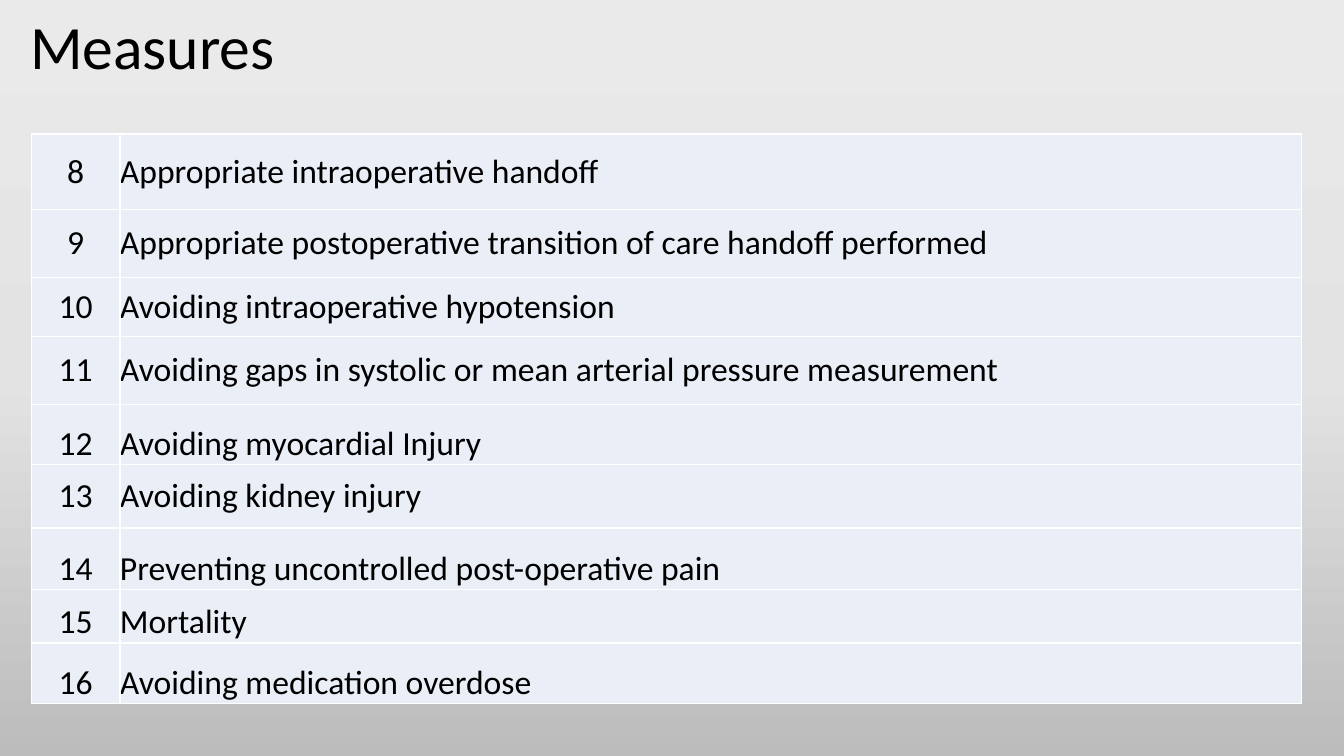
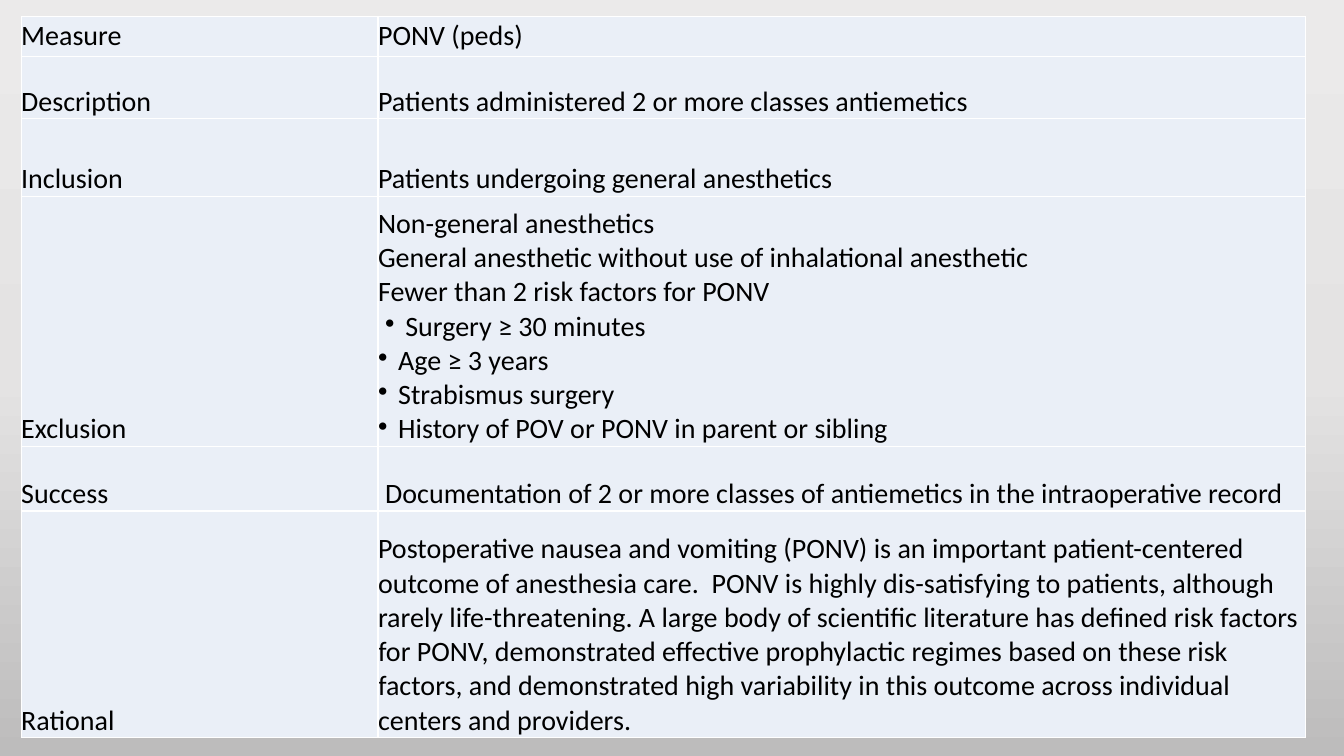
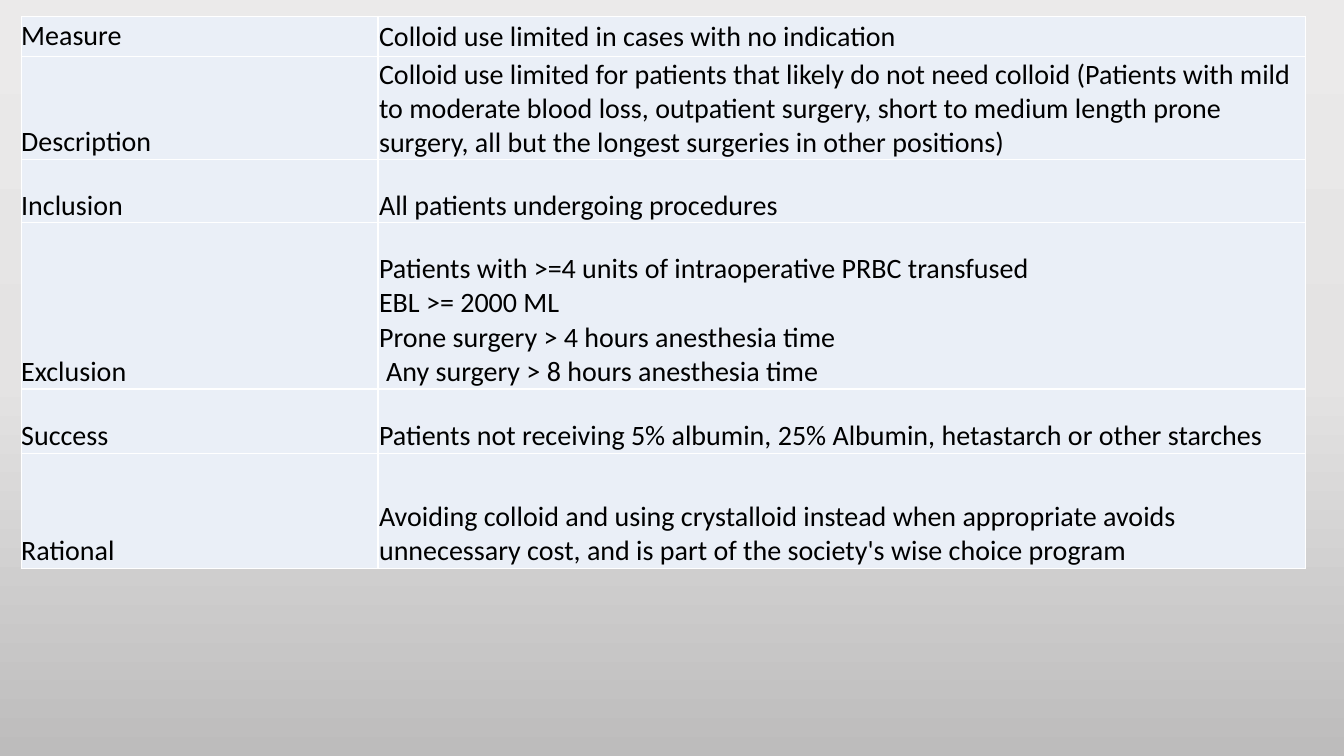
from copy import deepcopy

from pptx import Presentation
from pptx.dml.color import RGBColor
from pptx.enum.text import MSO_ANCHOR as ANCHOR, PP_ALIGN as ALIGN
from pptx.oxml import parse_xml
from pptx.oxml.ns import nsdecls, qn
from pptx.util import Inches, Pt

THEME = {
    "font": "Calibri",
    "text": "000000",
    "cell": "EAEFF7",
    "border": "FFFFFF",
    "background": [(0, "EBEAEA"), (0.5, "E4E3E3"), (1, "BDBCBC")],
    "title_size": 44,
    "list_size": 24,
    "detail_size": 20,
}
BULLET = "• "
BULLET_INDENT = 0.2
LEAD_INDENT = 0.07

LABELS = ["Measure", "Description", "Inclusion", "Exclusion", "Success", "Rational"]
DETAIL_ANCHORS = "mbbbbb"

MEASURES = [
    ("8", "Appropriate intraoperative handoff"),
    ("9", "Appropriate postoperative transition of care handoff performed"),
    ("10", "Avoiding intraoperative hypotension"),
    ("11", "Avoiding gaps in systolic or mean arterial pressure measurement"),
    ("12", "Avoiding myocardial Injury"),
    ("13", "Avoiding kidney injury"),
    ("14", "Preventing uncontrolled post-operative pain"),
    ("15", "Mortality"),
    ("16", "Avoiding medication overdose"),
]

PONV = [
    "PONV (peds)",
    "Patients administered 2 or more classes antiemetics",
    "Patients undergoing general anesthetics",
    "Non-general anesthetics\n"
    "General anesthetic without use of inhalational anesthetic\n"
    "Fewer than 2 risk factors for PONV\n"
    " • Surgery ≥ 30 minutes\n"
    "• Age ≥ 3 years\n"
    "• Strabismus surgery\n"
    "• History of POV or PONV in parent or sibling",
    " Documentation of 2 or more classes of antiemetics in the intraoperative record",
    "Postoperative nausea and vomiting (PONV) is an important patient-centered "
    "outcome of anesthesia care.  PONV is highly dis-satisfying to patients, although "
    "rarely life-threatening. A large body of scientific literature has defined risk "
    "factors for PONV, demonstrated effective prophylactic regimes based on these risk "
    "factors, and demonstrated high variability in this outcome across individual "
    "centers and providers.",
]

COLLOID = [
    "Colloid use limited in cases with no indication",
    "Colloid use limited for patients that likely do not need colloid (Patients with "
    "mild to moderate blood loss, outpatient surgery, short to medium length prone "
    "surgery, all but the longest surgeries in other positions)",
    "All patients undergoing procedures",
    "Patients with >=4 units of intraoperative PRBC transfused\n"
    "EBL >= 2000 ML\n"
    "Prone surgery > 4 hours anesthesia time\n"
    " Any surgery > 8 hours anesthesia time",
    "Patients not receiving 5% albumin, 25% Albumin, hetastarch or other starches",
    "Avoiding colloid and using crystalloid instead when appropriate avoids "
    "unnecessary cost, and is part of the society's wise choice program",
]

DETAIL = {"left": 0.21, "top": 0.16, "cols": [3.54, 9.2],
          "size": THEME["detail_size"], "anchors": DETAIL_ANCHORS}

SLIDES = [
    {"title": "Measures", "left": 0.31, "top": 1.33, "cols": [0.88, 11.72],
     "heights": [0.75, 0.67, 0.59, 0.67, 0.6, 0.63, 0.61, 0.53, 0.6],
     "size": THEME["list_size"], "anchors": "mmmmbmbbb",
     "first_align": ALIGN.CENTER, "rows": MEASURES},
    {**DETAIL, "heights": [0.4, 0.62, 0.77, 2.48, 0.64, 2.25],
     "rows": list(zip(LABELS, PONV))},
    {**DETAIL, "heights": [0.4, 1.02, 0.63, 1.65, 0.64, 1.14],
     "rows": list(zip(LABELS, COLLOID)), "pad": 0.01},
]


def set_background(master):
    fill = master.background.fill
    fill.gradient()
    fill.gradient_angle = 270
    stops = master.element.find(".//" + qn("a:gsLst"))
    stops.insert(1, deepcopy(stops[0]))
    for stop, (position, color) in zip(fill.gradient_stops, THEME["background"]):
        stop.position = position
        stop.color.rgb = RGBColor.from_string(color)


def style_font(font, size):
    for name, value in {"name": THEME["font"], "size": Pt(size), "bold": False}.items():
        setattr(font, name, value)
    font.color.rgb = RGBColor.from_string(THEME["text"])


def write_line(p, line, size, align):
    lead = LEAD_INDENT if line.startswith(" ") else 0
    line = line.lstrip()
    pPr = p._p.get_or_add_pPr()
    if line.startswith(BULLET):
        line = line.removeprefix(BULLET)
        lead += BULLET_INDENT
        pPr.set("indent", str(-Inches(BULLET_INDENT)))
        pPr.append(parse_xml(f'<a:buChar {nsdecls("a")} char="•"/>'))
    if lead:
        pPr.set("marL", str(Inches(lead)))
    p.alignment = align
    r = p.add_run()
    r.text = line
    style_font(r.font, size)


def format_cell(cell, anchor, pad):
    margins = {"margin_left": pad, "margin_top": pad, "margin_right": pad, "margin_bottom": 0}
    for name, value in margins.items():
        setattr(cell, name, Inches(value))
    cell.vertical_anchor = ANCHOR.MIDDLE if anchor == "m" else ANCHOR.BOTTOM
    tcPr = cell._tc.get_or_add_tcPr()
    for side in "LRTB":
        tcPr.append(parse_xml(
            f'<a:ln{side} {nsdecls("a")} w="{Pt(1)}"><a:solidFill>'
            f'<a:srgbClr val="{THEME["border"]}"/></a:solidFill></a:ln{side}>'))
    cell.fill.solid()
    cell.fill.fore_color.rgb = RGBColor.from_string(THEME["cell"])


def add_title(s, text):
    sp = s.shapes.add_textbox(Inches(0.2), Inches(0.11), Inches(11.5), Inches(0.77))
    tf = sp.text_frame
    tf.word_wrap = True
    tf.vertical_anchor = ANCHOR.MIDDLE
    p = tf.paragraphs[0]
    p.line_spacing = 0.9
    write_line(p, text, THEME["title_size"], ALIGN.LEFT)


def add_measure_table(s, data):
    cols, heights = data["cols"], data["heights"]
    table = s.shapes.add_table(
        len(heights), len(cols), Inches(data["left"]), Inches(data["top"]),
        Inches(sum(cols)), Inches(sum(heights))).table
    table.first_row = table.horz_banding = False
    for column, width in zip(table.columns, cols):
        column.width = Inches(width)
    aligns = [data.get("first_align", ALIGN.LEFT), ALIGN.LEFT]
    pads = [0, data.get("pad", 0)]
    for row, height, anchor, texts in zip(table.rows, heights, data["anchors"], data["rows"]):
        row.height = Inches(height)
        for cell, text, align, pad in zip(row.cells, texts, aligns, pads):
            format_cell(cell, anchor, pad)
            tf = cell.text_frame
            for i, line in enumerate(text.split("\n")):
                p = tf.add_paragraph() if i else tf.paragraphs[0]
                write_line(p, line, data["size"], align)


def main():
    prs = Presentation()
    prs.slide_width, prs.slide_height = Inches(13.33), Inches(7.5)
    set_background(prs.slide_master)
    for data in SLIDES:
        s = prs.slides.add_slide(prs.slide_layouts[6])
        add_measure_table(s, data)
        if "title" in data:
            add_title(s, data["title"])
    prs.save("out.pptx")


if __name__ == "__main__":
    main()
